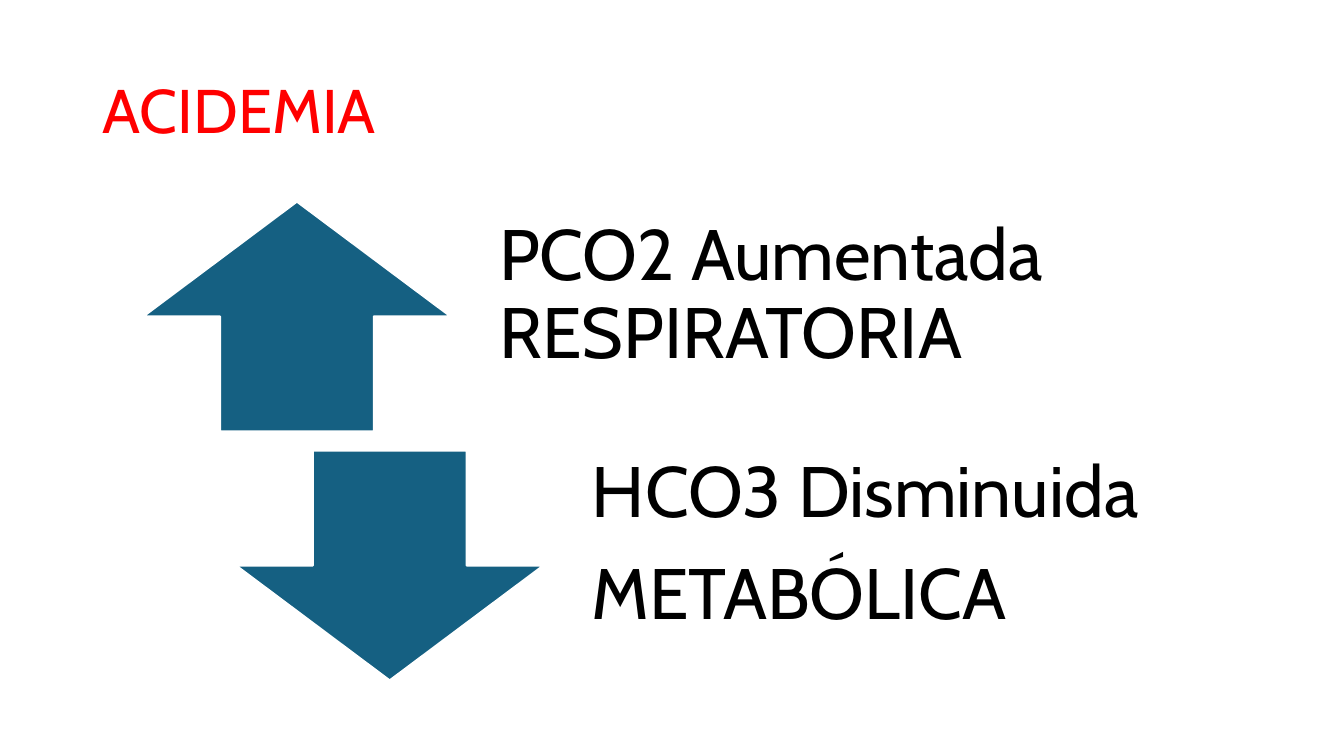
from dataclasses import dataclass

from pptx import Presentation
from pptx.dml.color import RGBColor
from pptx.enum.shapes import MSO_SHAPE as Preset
from pptx.enum.text import MSO_ANCHOR as Anchor
from pptx.slide import Slide
from pptx.util import Inches, Pt

FONT = "Cabin"
COLORS = {"title": "FF0000", "text": "000000", "arrow": "156082", "outline": "FFFFFF"}
ARROW_WIDTH, ROW_HEIGHT = 3.05, 2.28
LABEL_OFFSET, LABEL_WIDTH = 3.13, 6.44


@dataclass
class Cause:
    left: float
    top: float
    arrow: Preset
    lines: list[str]


CAUSES = [
    Cause(1.42, 2, Preset.UP_ARROW, ["PCO2 Aumentada RESPIRATORIA"]),
    Cause(2.34, 4.47, Preset.DOWN_ARROW, ["HCO3 Disminuida", "METABÓLICA"]),
]


def color(name: str) -> RGBColor:
    return RGBColor.from_string(COLORS[name])


def add_text(slide: Slide, lines: list[str], left: float, top: float, width: float,
             height: float, *, size: float, color_name: str = "text",
             insets: tuple[float, float, float, float] = (0.1, 0.05, 0.1, 0.05),
             space_after: float = 0) -> None:
    """Add a middle-anchored text box; insets run left, top, right, bottom."""
    shape = slide.shapes.add_textbox(Inches(left), Inches(top), Inches(width), Inches(height))
    frame = shape.text_frame
    frame.word_wrap = True
    frame.vertical_anchor = Anchor.MIDDLE
    (frame.margin_left, frame.margin_top,
     frame.margin_right, frame.margin_bottom) = map(Inches, insets)
    frame.text = "\n".join(lines)
    for paragraph in frame.paragraphs:
        paragraph.line_spacing = 0.9
        paragraph.space_after = Pt(space_after)
        paragraph.font.name = FONT
        paragraph.font.size = Pt(size)
        paragraph.font.color.rgb = color(color_name)


def add_cause(slide: Slide, cause: Cause) -> None:
    """Draw one arrow with its label on the right."""
    arrow = slide.shapes.add_shape(cause.arrow, Inches(cause.left), Inches(cause.top),
                                   Inches(ARROW_WIDTH), Inches(ROW_HEIGHT))
    arrow.shadow.inherit = False
    arrow.fill.solid()
    arrow.fill.fore_color.rgb = color("arrow")
    arrow.line.color.rgb = color("outline")
    arrow.line.width = Pt(1.5)
    add_text(slide, cause.lines, cause.left + LABEL_OFFSET, cause.top, LABEL_WIDTH,
             ROW_HEIGHT, size=51, insets=(0.4, 0, 0.4, 0.4), space_after=18)


def main() -> None:
    presentation = Presentation()
    presentation.slide_width, presentation.slide_height = Inches(13.33), Inches(7.5)
    slide = presentation.slides.add_slide(presentation.slide_layouts[6])

    # Title
    add_text(slide, ["ACIDEMIA"], 0.92, 0.4, 11.5, 1.45, size=44, color_name="title")

    # Arrows and labels
    for cause in CAUSES:
        add_cause(slide, cause)

    presentation.save("out.pptx")


if __name__ == "__main__":
    main()
